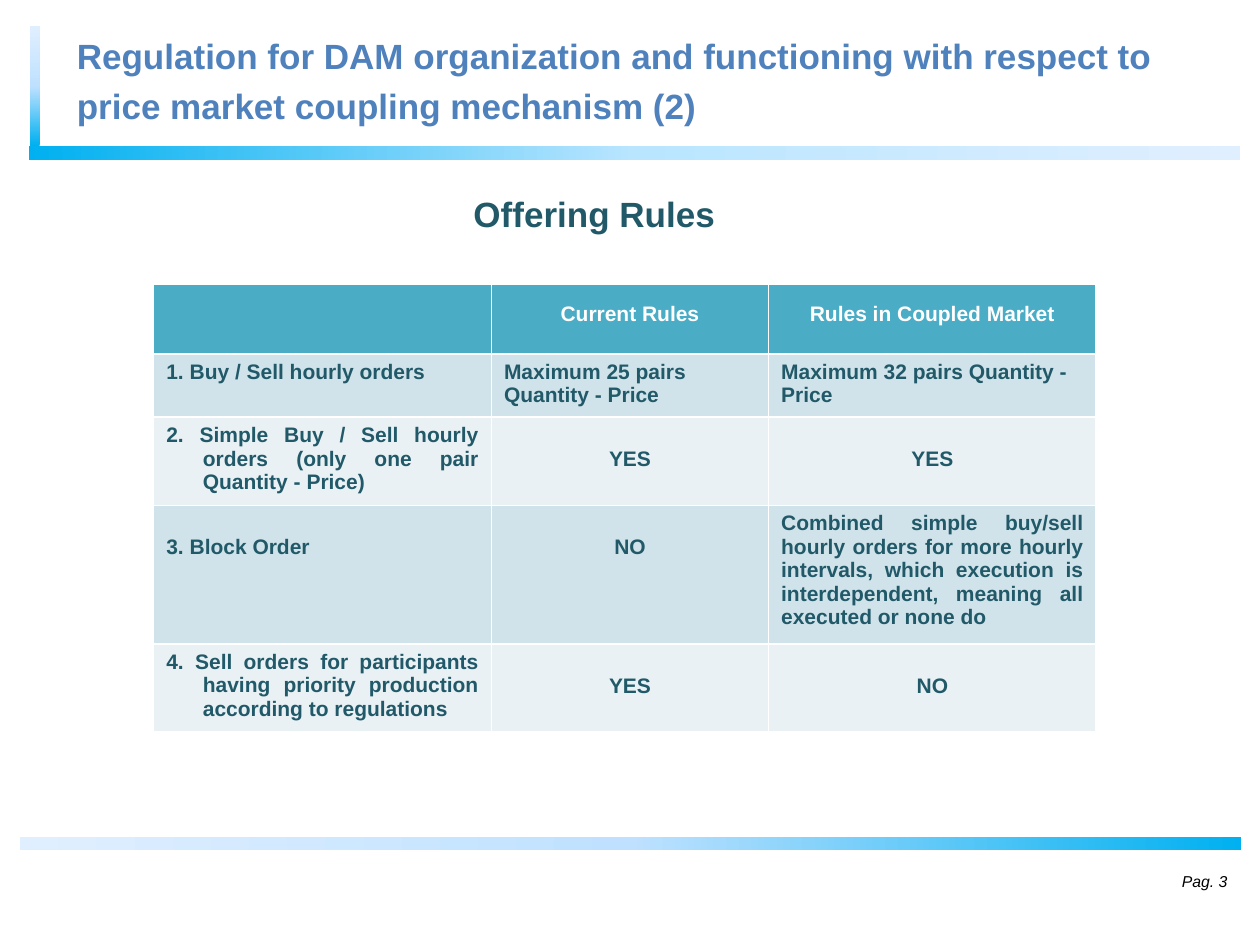
from copy import deepcopy

from pptx import Presentation, util as u
from pptx.dml.color import RGBColor
from pptx.enum import shapes, text
from pptx.oxml import parse_xml
from pptx.oxml.ns import nsdecls, qn

COLUMNS, ROWS = 100, 75
COLORS = {
    "title": "4F81BD", "text": "215968", "header": "4BACC6",
    "band_dark": "D0E3EA", "band_light": "E9F1F5",
    "white": "FFFFFF", "black": "000000",
    "blue": "00B0F0", "sky": "B9E5FF", "soft": "BFE1FF", "pale": "E0EFFF",
}
LEFT, CENTER, RIGHT, JUSTIFY = (
    text.PP_ALIGN.LEFT, text.PP_ALIGN.CENTER,
    text.PP_ALIGN.RIGHT, text.PP_ALIGN.JUSTIFY)
ONE_LINE = 0.19

HEADER = ["", "Current Rules", "Rules in Coupled Market"]
# Each cell: text, alignment, lines it is dropped below the top of its row
RULES = [
    [("1. Buy / Sell hourly orders", JUSTIFY, 0),
     ("Maximum 25 pairs Quantity - Price", LEFT, 0),
     ("Maximum 32 pairs Quantity - Price", LEFT, 0)],
    [("2. Simple Buy / Sell hourly orders (only one pair Quantity - Price)", JUSTIFY, 0),
     ("YES", CENTER, 1), ("YES", CENTER, 1)],
    [("3. Block Order", JUSTIFY, 1), ("NO", CENTER, 1),
     ("Combined simple buy/sell hourly orders for more hourly intervals, which "
      "execution is interdependent, meaning all executed or none do", JUSTIFY, 0)],
    [("4. Sell orders for participants having priority production according to "
      "regulations", JUSTIFY, 0),
     ("YES", CENTER, 1), ("NO", CENTER, 1)],
]


def rgb(name):
    return RGBColor.from_string(COLORS[name])


class SlideBuilder:
    """Holds the style and the current slide; lengths are grid columns and rows."""

    font_name = "Arial"

    def __init__(self, presentation):
        self.column = presentation.slide_width / COLUMNS
        self.row = presentation.slide_height / ROWS
        self.slide = presentation.slides.add_slide(presentation.slide_layouts[5])

    def box(self, left, top, width, height):
        return [int(left * self.column), int(top * self.row),
                int(width * self.column), int(height * self.row)]

    def set_text(self, frame, words, size, color, align=LEFT, spacing=1.0, italic=False):
        frame.text = words
        paragraph = frame.paragraphs[0]
        paragraph.alignment = align
        paragraph.line_spacing = spacing
        font = paragraph.font
        font.name, font.size = self.font_name, u.Pt(size)
        font.bold, font.italic = not italic, italic
        font.color.rgb = rgb(color)
        return paragraph

    def bar(self, place, colors, rotation=0):
        shape = self.slide.shapes.add_shape(
            shapes.MSO_SHAPE.RECTANGLE, *self.box(*place))
        shape.shadow.inherit = False
        shape.line.fill.background()
        shape.rotation = rotation
        shape.fill.gradient()
        shape.fill.gradient_angle = 0
        stops = shape._element.spPr.find(".//" + qn("a:gsLst"))
        stops.append(deepcopy(stops[0]))
        for index, (stop, color) in enumerate(zip(shape.fill.gradient_stops, colors)):
            stop.position = index / 2
            stop.color.rgb = rgb(color)

    def title(self, place, words):
        title = self.slide.shapes.title
        title.left, title.top, title.width, title.height = self.box(*place)
        frame = title.text_frame
        frame.auto_size = text.MSO_AUTO_SIZE.NONE
        frame.vertical_anchor = text.MSO_ANCHOR.MIDDLE
        self.set_text(frame, words, 20, "title", spacing=1.2)

    def label(self, place, words, size, color, anchor=text.MSO_ANCHOR.TOP, **style):
        shape = self.slide.shapes.add_textbox(*self.box(*place))
        frame = shape.text_frame
        frame.word_wrap = True
        frame.vertical_anchor = anchor
        self.set_text(frame, words, size, color, **style)
        return shape

    def cell(self, cell, words, fill, color, align, dropped=0, spacing=1.0, hanging=False):
        cell.fill.solid()
        cell.fill.fore_color.rgb = rgb(fill)
        cell.margin_top = u.Inches(0.05 + dropped * ONE_LINE)
        paragraph = self.set_text(cell.text_frame, words, 12, color, align, spacing)
        if hanging:
            properties = paragraph._p.get_or_add_pPr()
            properties.set("marL", str(u.Inches(0.29)))
            properties.set("indent", str(-u.Inches(0.29)))
        self.borders(cell)

    def borders(self, cell):
        properties = cell._tc.get_or_add_tcPr()
        for index, side in enumerate(("lnL", "lnR", "lnT", "lnB")):
            properties.insert(index, parse_xml(
                f'<a:{side} {nsdecls("a")} w="{u.Pt(1)}"><a:solidFill>'
                f'<a:srgbClr val="{COLORS["white"]}"/></a:solidFill></a:{side}>'))

    def table(self, left, top, widths, heights):
        place = self.box(left, top, sum(widths), sum(heights))
        table = self.slide.shapes.add_table(len(heights), len(widths), *place).table
        for column, width in zip(table.columns, widths):
            column.width = int(width * self.column)
        for row, height in zip(table.rows, heights):
            row.height = int(height * self.row)
        for index, words in enumerate(HEADER):
            self.cell(table.cell(0, index), words, "header", "white", CENTER, spacing=1.5)
        for number, rule in enumerate(RULES, start=1):
            fill = "band_dark" if number % 2 else "band_light"
            for index, (words, align, dropped) in enumerate(rule):
                self.cell(table.cell(number, index), words, fill, "text", align,
                          dropped, hanging=index == 0)


def main():
    presentation = Presentation()
    presentation.slide_width, presentation.slide_height = u.Inches(10), u.Inches(7.5)
    builder = SlideBuilder(presentation)

    builder.bar((2.3, 11.6, 96.1, 1.1), ("blue", "sky", "pale"))
    builder.bar((-2, 6.4, 9.5, 0.8), ("blue", "soft", "pale"), rotation=270)
    builder.bar((1.6, 66.4, 96.9, 1.1), ("pale", "soft", "blue"))
    builder.label((87.5, 67.9, 10.9, 4), "Pag. 3", 9, "black",
                  anchor=text.MSO_ANCHOR.MIDDLE, align=RIGHT, italic=True)

    heading = builder.label((36.6, 14.8, 22, 4.6), "Offering Rules", 20, "text")
    heading.fill.solid()
    heading.fill.fore_color.rgb = rgb("white")

    builder.table(12.2, 22.6, (26.8, 22, 26), (5.5, 4.7, 6.6, 10.3, 6.6))
    builder.title((5.1, 2.1, 92.9, 7.9),
                  "Regulation for DAM organization and functioning with respect to "
                  "price market coupling mechanism (2)")
    presentation.save("out.pptx")


if __name__ == "__main__":
    main()
